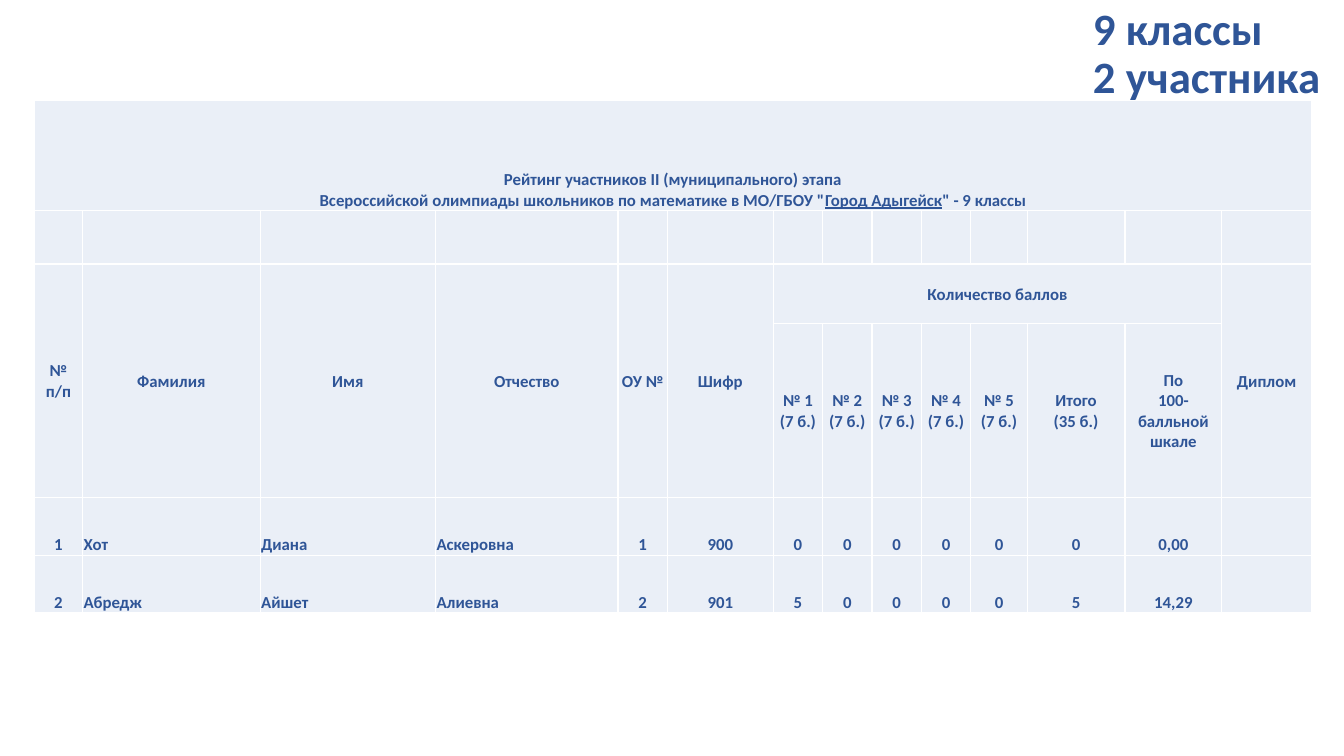
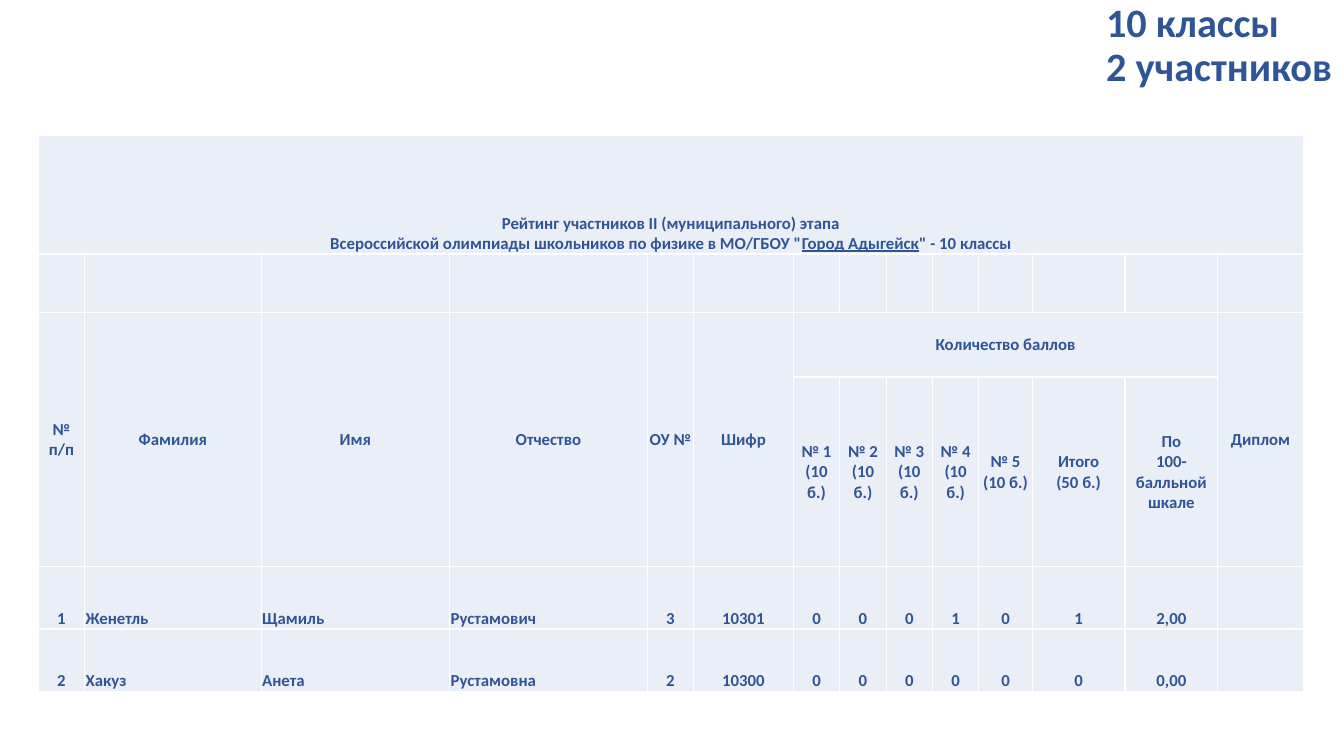
"""Builds two slides with school olympiad ratings."""
from lxml import etree
from pptx import Presentation
from pptx.dml.color import RGBColor
from pptx.enum.text import MSO_ANCHOR, MSO_AUTO_SIZE, PP_ALIGN
from pptx.oxml.ns import qn
from pptx.util import Inches, Pt

MID, LOW = MSO_ANCHOR.MIDDLE, MSO_ANCHOR.BOTTOM
LEFT, MIDST = PP_ALIGN.LEFT, PP_ALIGN.CENTER
FIXED = MSO_AUTO_SIZE.NONE
HUES = {"ink": "2F5597", "cell": "EAEFF7", "rule": "FFFFFF"}
FONT = "Calibri"
TASKS = 5
HEADS = ["№\nп/п", "Фамилия", "Имя", "Отчество", "ОУ №", "Шифр"]
FIRST, LAST = len(HEADS), len(HEADS) + TASKS + 2
NAMES = range(1, 4)

GRADES = [
    {
        "title": "9 классы\n2 участника", "size": 32,
        "head": (10.74, 0, 2.59, 1.09), "spot": (0.34, 1),
        "cols": [0.48, 1.76, 1.74, 1.81, 0.49, 1.05] + [0.49] * 4 + [0.56, 0.97, 0.96, 0.89],
        "rows": [1.09, 0.53, 0.59, 1.73, 0.57, 0.57],
        "topic": "математике", "grade": 9, "most": 7,
        "pupils": [
            (["Хот", "Диана", "Аскеровна", "1", "900"], [0, 0, 0, 0, 0]),
            (["Абредж", "Айшет", "Алиевна", "2", "901"], [5, 0, 0, 0, 0]),
        ],
    },
    {
        "title": "10 классы\n2 участников", "size": 28.8,
        "head": (10.87, 0, 2.46, 0.92), "spot": (0.38, 1.34),
        "cols": [0.46, 1.75, 1.87, 1.96, 0.46, 0.99] + [0.46] * 4 + [0.53, 0.92, 0.92, 0.85],
        "rows": [1.18, 0.58, 0.64, 1.88, 0.62, 0.62],
        "topic": "физике", "grade": 10, "most": 10,
        "pupils": [
            (["Женетль", "Щамиль", "Рустамович", "3", "10301"], [0, 0, 0, 1, 0]),
            (["Хакуз", "Анета", "Рустамовна", "2", "10300"], [0, 0, 0, 0, 0]),
        ],
    },
]


def write(frame, parts, size, align):
    """Adds (text, underline) parts as runs, with line breaks."""
    para = frame.paragraphs[0]
    para.alignment = align
    for text, under in parts:
        for i, line in enumerate(text.split("\n")):
            if i:
                para.add_line_break()
            run = para.add_run()
            run.text = line
            font = run.font
            font.name, font.size, font.bold = FONT, Pt(size), True
            font.underline = under
            font.color.rgb = RGBColor.from_string(HUES["ink"])
    return para


def style(cell):
    """Gives a cell its white rules and pale fill."""
    props = cell._tc.get_or_add_tcPr()
    for side in ("lnL", "lnR", "lnT", "lnB"):
        line = etree.SubElement(props, qn("a:" + side), w=str(Pt(1)))
        fill = etree.SubElement(line, qn("a:solidFill"))
        etree.SubElement(fill, qn("a:srgbClr"), val=HUES["rule"])
    cell.fill.solid()
    cell.fill.fore_color.rgb = RGBColor.from_string(HUES["cell"])


def put(cell, parts, anchor=MID, align=MIDST):
    """Writes into a cell with tight margins."""
    cell.margin_left = cell.margin_right = cell.margin_top = Inches(0.01)
    cell.margin_bottom = 0
    cell.vertical_anchor = anchor
    write(cell.text_frame, parts, 12, align)


def header(grid, data):
    """Fills the caption and the two rows of column heads."""
    grid.cell(0, 0).merge(grid.cell(0, LAST))
    put(grid.cell(0, 0), [
        ("Рейтинг участников II (муниципального) этапа\n"
         f"Всероссийской олимпиады школьников по {data['topic']} в МО/ГБОУ \"", False),
        ("Город Адыгейск", True),
        (f"\" - {data['grade']} классы", False)], LOW)
    for col, text in [*enumerate(HEADS), (LAST, "Диплом")]:
        grid.cell(2, col).merge(grid.cell(3, col))
        put(grid.cell(2, col), [(text, False)])
    grid.cell(2, FIRST).merge(grid.cell(2, LAST - 1))
    put(grid.cell(2, FIRST), [("Количество баллов", False)])
    most = data["most"]
    heads = [f"№ {n}\n({most} б.)" for n in range(1, TASKS + 1)]
    heads += [f"Итого\n({most * TASKS} б.)", "По\n100-балльной\nшкале"]
    for col, text in enumerate(heads, FIRST):
        put(grid.cell(3, col), [(text, False)])


def scores(grid, data):
    """Fills one row for each pupil, with total and percentage."""
    for num, (names, marks) in enumerate(data["pupils"], 1):
        total = sum(marks)
        share = f"{100 * total / (data['most'] * TASKS):.2f}".replace(".", ",")
        for col, value in enumerate([num, *names, *marks, total, share]):
            align = LEFT if col in NAMES else MIDST
            put(grid.cell(num + 3, col), [(str(value), False)], LOW, align)


def rating(slide, data):
    """Places the rating table at its spot."""
    cols, rows = data["cols"], data["rows"]
    box = [Inches(v) for v in (*data["spot"], sum(cols), sum(rows))]
    grid = slide.shapes.add_table(len(rows), len(cols), *box).table
    grid.first_row = grid.horz_banding = False
    for col, width in zip(grid.columns, cols):
        col.width = Inches(width)
    for row, height in zip(grid.rows, rows):
        row.height = Inches(height)
        for cell in row.cells:
            style(cell)
    header(grid, data)
    scores(grid, data)


def heading(slide, data):
    """Moves and formats the title in the top right corner."""
    title = slide.shapes.title
    title.left, title.top, title.width, title.height = map(Inches, data["head"])
    frame = title.text_frame
    frame.word_wrap, frame.auto_size = True, FIXED
    frame.vertical_anchor = MID
    write(frame, [(data["title"], False)], data["size"], LEFT).line_spacing = 0.9


def main():
    """Builds and saves the deck."""
    deck = Presentation()
    deck.slide_width, deck.slide_height = Inches(13.33), Inches(7.5)
    for data in GRADES:
        slide = deck.slides.add_slide(deck.slide_layouts[5])
        heading(slide, data)
        rating(slide, data)
    deck.save("out.pptx")


if __name__ == "__main__":
    main()
